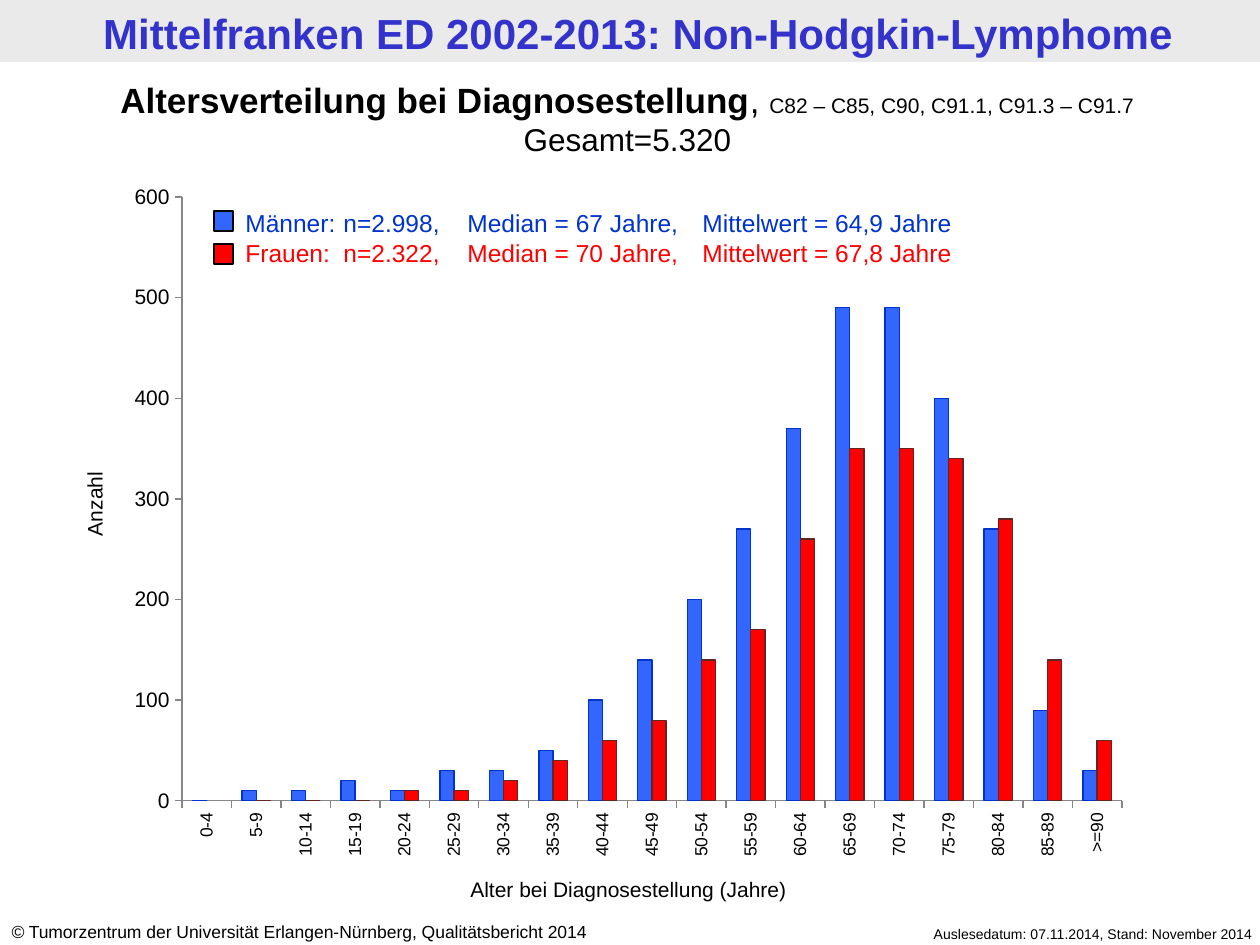
from dataclasses import dataclass
from typing import NamedTuple, Optional

from lxml.etree import SubElement
from pptx import Presentation
from pptx.chart.data import CategoryChartData
from pptx.dml.color import RGBColor
from pptx.enum.chart import XL_CHART_TYPE as ChartType, XL_TICK_MARK as TickMark
from pptx.enum.shapes import MSO_SHAPE as Preset
from pptx.enum.text import PP_ALIGN as Align
from pptx.oxml import parse_xml
from pptx.oxml.ns import nsdecls, qn
from pptx.util import Emu, Pt

PX_PER_INCH = 126


def px(length: float) -> Emu:
    return Emu(round(length * 914400 / PX_PER_INCH))


@dataclass(frozen=True)
class Theme:
    font: str = "Arial"
    chart_font: str = "Calibri"
    black: str = "000000"
    white: str = "FFFFFF"
    band: str = "EAEAEA"
    title: str = "3333CC"
    axis: str = "868686"
    title_size: int = 24
    heading_size: int = 20
    total_size: int = 18
    legend_size: int = 14
    label_size: int = 12
    small_size: int = 10
    date_size: int = 8


THEME = Theme()


class Box(NamedTuple):
    left: int
    top: int
    width: int
    height: int

    def emu(self) -> list[Emu]:
        return [px(length) for length in self]


class Run(NamedTuple):
    text: str
    size: int
    color: str = THEME.black
    bold: bool = False
    italic: bool = False


class Group(NamedTuple):
    legend: str
    values: tuple[Optional[int], ...]
    fill: str
    line: str
    text_color: str
    swatch: Box


AGES = [f"{age}-{age + 4}" for age in range(0, 90, 5)] + [">=90"]
LEGEND_TABS = (98, 111, 222, 457)
GROUPS = [
    Group("Männer: \tn=2.998, \tMedian = 67 Jahre, \tMittelwert = 64,9 Jahre",
          (0, 10, 10, 20, 10, 30, 30, 50, 100, 140, 200, 270, 370, 490, 490,
           400, 270, 90, 30),
          "3366FF", "0033CC", "0033CC", Box(214, 211, 19, 20)),
    Group("Frauen: \tn=2.322, \tMedian = 70 Jahre,\tMittelwert = 67,8 Jahre",
          (None, 0, 0, 0, 10, 10, 20, 40, 60, 80, 140, 170, 260, 350, 350,
           340, 280, 140, 60),
          "FF0000", "632523", "FF0000", Box(214, 244, 19, 20)),
]


def rgb(color: str) -> RGBColor:
    return RGBColor.from_string(color)


def add_text(slide, box: Box, *lines: list[Run], align=Align.LEFT,
             tabs: tuple[int, ...] = (), rotation: int = 0) -> None:
    shape = slide.shapes.add_textbox(*box.emu())
    shape.rotation = rotation
    frame = shape.text_frame
    frame.word_wrap = True
    for index, runs in enumerate(lines):
        paragraph = frame.add_paragraph() if index else frame.paragraphs[0]
        paragraph.alignment = align
        if tabs:
            tab_list = SubElement(paragraph._p.get_or_add_pPr(), qn("a:tabLst"))
            for tab in tabs:
                SubElement(tab_list, qn("a:tab"), pos=str(px(tab)), algn="l")
        for item in runs:
            run = paragraph.add_run()
            run.text = item.text
            font = run.font
            font.name, font.size = THEME.font, Pt(item.size)
            font.bold, font.italic = item.bold, item.italic
            font.color.rgb = rgb(item.color)


def add_rectangle(slide, box: Box, fill: str, line: Optional[str] = None) -> None:
    shape = slide.shapes.add_shape(Preset.RECTANGLE, *box.emu())
    shape.shadow.inherit = False
    shape.fill.solid()
    shape.fill.fore_color.rgb = rgb(fill)
    if line:
        shape.line.color.rgb = rgb(line)
        shape.line.width = Pt(0.75)
    else:
        shape.line.fill.background()


def format_axis(axis, size: int) -> None:
    axis.has_major_gridlines = False
    axis.major_tick_mark = TickMark.OUTSIDE
    axis.minor_tick_mark = TickMark.NONE
    axis.format.line.color.rgb = rgb(THEME.axis)
    axis.format.line.width = Pt(0.75)
    font = axis.tick_labels.font
    font.name, font.size = THEME.font, Pt(size)
    font.color.rgb = rgb(THEME.black)


def add_age_chart(slide, box: Box, plot_box: Box) -> None:
    data = CategoryChartData()
    data.categories = AGES
    for number, group in enumerate(GROUPS, 1):
        data.add_series(f"Series {number}", group.values)
    chart = slide.shapes.add_chart(ChartType.COLUMN_CLUSTERED, *box.emu(), data).chart
    chart.has_legend = False
    chart.has_title = False
    chart.font.name, chart.font.size = THEME.chart_font, Pt(THEME.total_size)
    chart.font.color.rgb = rgb(THEME.black)

    plot = chart.plots[0]
    plot.gap_width, plot.overlap, plot.vary_by_categories = 150, 0, False
    for series, group in zip(plot.series, GROUPS):
        series.format.fill.solid()
        series.format.fill.fore_color.rgb = rgb(group.fill)
        series.format.line.color.rgb = rgb(group.line)
        series.format.line.width = Pt(0.75)
        series.invert_if_negative = False

    # Axes, with upright age labels
    format_axis(chart.category_axis, THEME.small_size)
    format_axis(chart.value_axis, THEME.label_size)
    chart.value_axis.minimum_scale = 0
    chart.value_axis.maximum_scale = 600
    chart.value_axis.major_unit = 100
    body = chart.category_axis._element.find(f"{qn('c:txPr')}/{qn('a:bodyPr')}")
    body.set("rot", "-5400000")
    body.set("vert", "horz")

    # Fixed inner plot area on a white ground
    area = chart._chartSpace.chart.plotArea
    for old in area.findall(qn("c:layout")):
        area.remove(old)
    layout = SubElement(area, qn("c:layout"))
    area.insert(0, layout)
    manual = SubElement(layout, qn("c:manualLayout"))
    settings = {
        "layoutTarget": "inner", "xMode": "edge", "yMode": "edge",
        "x": (plot_box.left - box.left) / box.width,
        "y": (plot_box.top - box.top) / box.height,
        "w": plot_box.width / box.width,
        "h": plot_box.height / box.height,
    }
    for name, value in settings.items():
        SubElement(manual, qn(f"c:{name}"), val=str(value))
    area.append(parse_xml(
        f'<c:spPr {nsdecls("c", "a")}><a:solidFill><a:srgbClr val="{THEME.white}"/>'
        '</a:solidFill><a:ln><a:noFill/></a:ln></c:spPr>'))


def main() -> None:
    presentation = Presentation()
    presentation.slide_width, presentation.slide_height = px(1260), px(945)
    slide = presentation.slides.add_slide(presentation.slide_layouts[6])

    # Title band and footer
    add_rectangle(slide, Box(0, 0, 1260, 62), THEME.band)
    add_text(slide, Box(8, 1, 1260, 62),
             [Run("Mittelfranken ED 2002-2013: Non-Hodgkin-Lymphome",
                  THEME.title_size, THEME.title, bold=True)], align=Align.CENTER)
    add_text(slide, Box(838, 919, 427, 30),
             [Run("Auslesedatum: 07.11.2014, Stand: November 2014", THEME.date_size)],
             align=Align.RIGHT)
    add_text(slide, Box(-1, 915, 660, 34),
             [Run("©", THEME.small_size, italic=True),
              Run(" Tumorzentrum der Universität Erlangen-Nürnberg, "
                  "Qualitätsbericht 2014", THEME.small_size)])

    # Chart and heading
    add_age_chart(slide, Box(115, 171, 1028, 699), Box(182, 197, 940, 604))
    add_text(slide, Box(-5, 72, 1265, 93),
             [Run("Altersverteilung bei Diagnosestellung", THEME.heading_size, bold=True),
              Run(", ", THEME.heading_size),
              Run("C82 – C85, C90, C91.1, C91.3 – C91.7", THEME.label_size)],
             [Run("Gesamt=5.320", THEME.total_size)], align=Align.CENTER)

    # Legend and axis titles
    add_text(slide, Box(233, 202, 863, 72),
             *([Run(group.legend, THEME.legend_size, group.text_color)]
               for group in GROUPS), tabs=LEGEND_TABS)
    for group in GROUPS:
        add_rectangle(slide, group.swatch, group.fill, THEME.black)
    add_text(slide, Box(435, 870, 387, 38),
             [Run("Alter bei Diagnosestellung (Jahre)", THEME.label_size)],
             align=Align.CENTER)
    add_text(slide, Box(-70, 485, 329, 38), [Run("Anzahl", THEME.label_size)],
             align=Align.CENTER, rotation=270)

    presentation.save("out.pptx")


if __name__ == "__main__":
    main()
